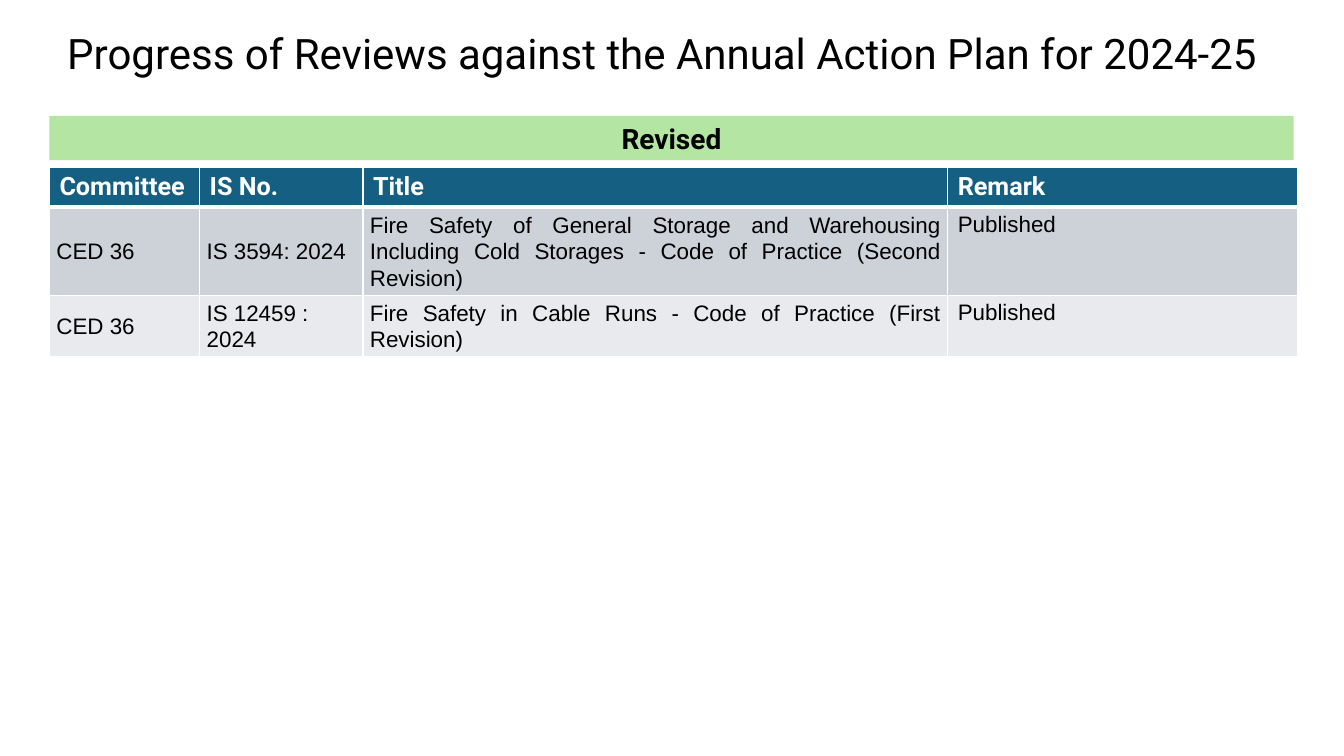
from lxml.etree import SubElement as Sub
from pptx import Presentation
from pptx.dml.color import RGBColor as RGB
from pptx.enum.shapes import MSO_SHAPE as SHAPE
from pptx.enum.text import MSO_ANCHOR as ANCHOR, MSO_AUTO_SIZE as AUTO, PP_ALIGN as ALIGN
from pptx.oxml.ns import qn
from pptx.util import Pt

SCALE = 9144
INK = {
    "black": "000000", "white": "FFFFFF", "green": "B4E5A2",
    "blue": "156082", "dark": "CCD2D8", "light": "E8EAED",
}
HEADS = ["Committee", "IS No.", "Title", "Remark"]
ROWS = [
    ["CED 36", "IS 3594: 2024",
     "Fire Safety of General Storage and Warehousing Including Cold Storages"
     " - Code of Practice (Second Revision)", "Published"],
    ["CED 36", "IS 12459 : 2024",
     "Fire Safety in Cable Runs - Code of Practice (First Revision)", "Published"],
]
WIDTHS = [149, 162, 580, 347]
HEIGHTS = [39, 88, 60]
HEAD = {"name": "Roboto", "size": Pt(18), "bold": True}
BODY = {"name": "Arial", "size": Pt(16), "bold": False}
TIGHT = {"vertical_anchor": ANCHOR.MIDDLE}


def px(num):
    return num * SCALE


def apply(item, vals):
    for key, val in vals.items():
        setattr(item, key, val)


def paint(item, ink):
    item.fill.solid()
    item.fill.fore_color.rgb = RGB.from_string(INK[ink])


def write(frame, text, font, ink, para=None):
    line = frame.paragraphs[0]
    run = line.add_run()
    run.text = text
    apply(line, para or {})
    apply(run.font, font)
    run.font.color.rgb = RGB.from_string(INK[ink])


def edge(cell, side, width):
    line = Sub(cell._tc.get_or_add_tcPr(), qn(f"a:ln{side}"), w=str(Pt(width)))
    fill = Sub(line, qn("a:solidFill"))
    Sub(fill, qn("a:srgbClr"), val=INK["white"])


def add_title(slide, text):
    title = slide.shapes.title
    apply(title, {"left": px(17), "top": px(19), "width": px(1280), "height": px(64)})
    frame = title.text_frame
    apply(frame, {"word_wrap": True, "auto_size": AUTO.NONE,
                  "vertical_anchor": ANCHOR.BOTTOM})
    write(frame, text, {"name": "Roboto", "size": Pt(30)}, "black",
          {"alignment": ALIGN.CENTER, "line_spacing": 0.9})


def add_band(slide, text):
    band = slide.shapes.add_shape(SHAPE.RECTANGLE, px(49), px(115), px(1234), px(44))
    band.shadow.inherit = False
    paint(band, "green")
    band.line.fill.background()
    frame = band.text_frame
    apply(frame, {"word_wrap": True, "vertical_anchor": ANCHOR.MIDDLE})
    write(frame, text, {"name": "Roboto", "size": Pt(20), "bold": True}, "black",
          {"alignment": ALIGN.CENTER})


def fill_cell(cell, row, col, text):
    for side in "LR":
        edge(cell, side, 1)
    edge(cell, "T", 3 if row == 1 else 1)
    edge(cell, "B", 3 if row == 0 else 1)
    paint(cell, ["blue", "dark", "light"][row])
    if row == 0:
        write(cell.text_frame, text, HEAD, "white")
    elif HEADS[col] == "Remark":
        write(cell.text_frame, text, BODY, "black")
    else:
        apply(cell, {"margin_left": px(7), "margin_right": px(7),
                     "margin_top": px(2), "margin_bottom": px(2), **TIGHT})
        side = ALIGN.JUSTIFY if HEADS[col] == "Title" else ALIGN.LEFT
        write(cell.text_frame, text, BODY, "black",
              {"alignment": side, "line_spacing": 1.07})


def add_grid(slide):
    data = [HEADS, *ROWS]
    grid = slide.shapes.add_table(len(data), len(HEADS), px(49), px(166),
                                  px(sum(WIDTHS)), px(sum(HEIGHTS))).table
    for col, width in zip(grid.columns, WIDTHS):
        col.width = px(width)
    for row, height in zip(grid.rows, HEIGHTS):
        row.height = px(height)
    for row, texts in enumerate(data):
        for col, text in enumerate(texts):
            fill_cell(grid.cell(row, col), row, col, text)


def main():
    deck = Presentation()
    apply(deck, {"slide_width": px(1333), "slide_height": px(750)})
    slide = deck.slides.add_slide(deck.slide_layouts.get_by_name("Title Only"))
    add_title(slide, "Progress of Reviews against the Annual Action Plan for 2024-25")
    add_band(slide, "Revised")
    add_grid(slide)
    deck.save("out.pptx")


if __name__ == "__main__":
    main()
